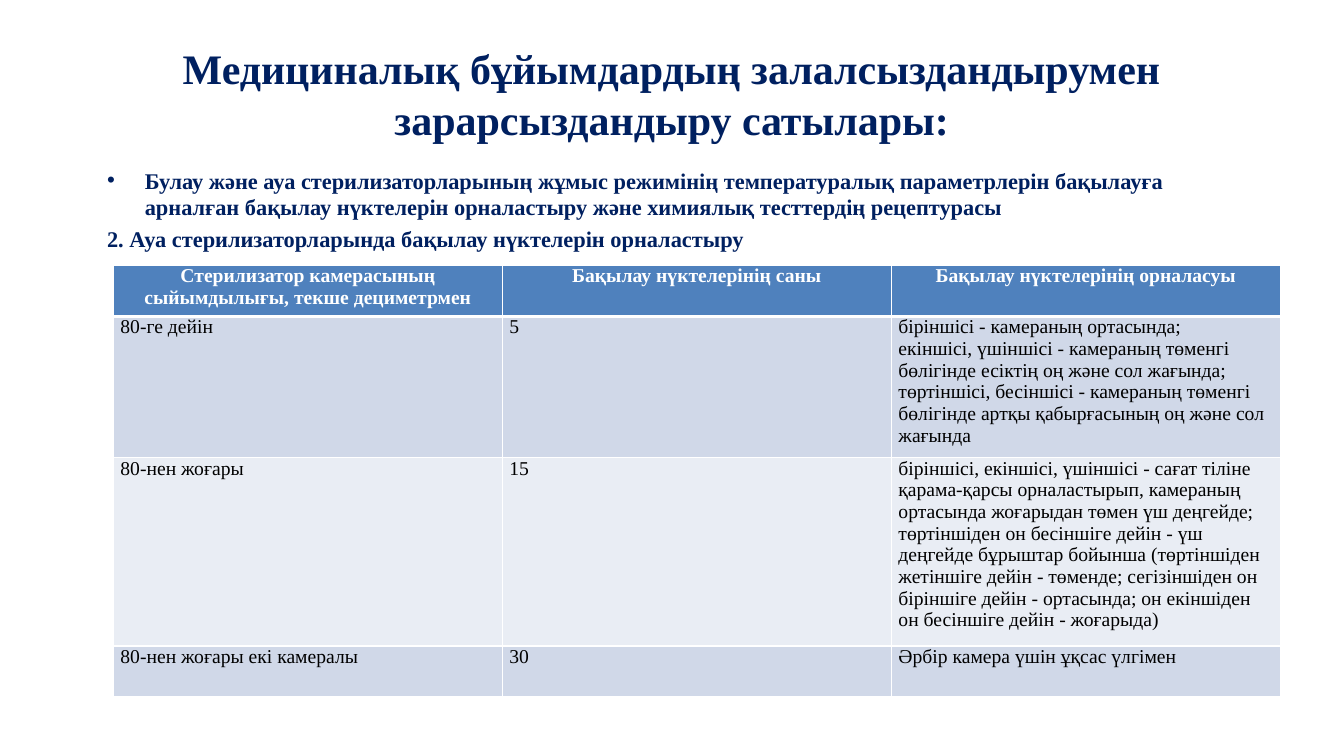
from lxml import etree
from pptx import Presentation
from pptx.dml.color import RGBColor
from pptx.enum import text
from pptx.oxml import ns
from pptx.util import Pt

TITLE = "Медициналық бұйымдардың залалсыздандырумен зарарсыздандыру сатылары:"
INTRO = [  # bullet character, wording
    ("•", "Булау және ауа стерилизаторларының жұмыс режимінің температуралық "
          "параметрлерін бақылауға арналған бақылау нүктелерін орналастыру "
          "және химиялық тесттердің рецептурасы"),
    (None, "2. Ауа стерилизаторларында бақылау нүктелерін орналастыру"),
]
HEADER = ["Стерилизатор камерасының сыйымдылығы, текше дециметрмен",
          "Бақылау нүктелерінің саны", "Бақылау нүктелерінің орналасуы"]
STERILIZERS = [  # chamber volume, number of points, placement of points
    ("80-ге дейін", "5",
     "біріншісі - камераның ортасында;\n"
     "екіншісі, үшіншісі - камераның төменгі бөлігінде есіктің оң және сол жағында;\n"
     "төртіншісі, бесіншісі - камераның төменгі бөлігінде артқы қабырғасының "
     "оң және сол жағында"),
    ("80-нен жоғары", "15",
     "біріншісі, екіншісі, үшіншісі - сағат тіліне қарама-қарсы орналастырып, "
     "камераның ортасында жоғарыдан төмен үш деңгейде;\n"
     "төртіншіден он бесіншіге дейін - үш деңгейде бұрыштар бойынша "
     "(төртіншіден жетіншіге дейін - төменде; сегізіншіден он біріншіге дейін - "
     "ортасында; он екіншіден он бесіншіге дейін - жоғарыда)"),
    ("80-нен жоғары екі камералы", "30", "Әрбір камера үшін ұқсас үлгімен"),
]
ROW_HEIGHTS = [36.5, 93, 123.5, 36.5]
COLUMN_WIDTH = 277.9
FONT = "Times New Roman"
COLORS = {"navy": "002060", "header": "4F81BD", "odd": "D0D8E8",
          "even": "E9EDF4", "white": "FFFFFF", "black": "000000"}


def add_run(paragraph, wording, size, color, bold):
    run = paragraph.add_run()
    run.text = wording
    run.font.name, run.font.size, run.font.bold = FONT, Pt(size), bold
    run.font.color.rgb = RGBColor.from_string(COLORS[color])


def set_borders(cell, top, bottom):
    """Put white lines, with widths in points, on all four sides."""
    props = cell._tc.get_or_add_tcPr()
    sides = [("L", 1), ("R", 1), ("T", top), ("B", bottom)]
    for place, (side, width) in enumerate(sides):
        line = etree.Element(ns.qn("a:ln" + side), w=str(Pt(width)))
        fill = etree.SubElement(line, ns.qn("a:solidFill"))
        etree.SubElement(fill, ns.qn("a:srgbClr"), val=COLORS["white"])
        props.insert(place, line)


def fill_cell(cell, wording, fill, is_header):
    cell.fill.solid()
    cell.fill.fore_color.rgb = RGBColor.from_string(COLORS[fill])
    cell.margin_left = cell.margin_right = Pt(5)
    cell.margin_top = cell.margin_bottom = 0
    frame = cell.text_frame
    for i, part in enumerate(wording.split("\n")):
        paragraph = frame.add_paragraph() if i else frame.paragraphs[0]
        if is_header:
            paragraph.alignment = text.PP_ALIGN.CENTER
        add_run(paragraph, part, 14, "white" if is_header else "black", is_header)


prs = Presentation()
prs.slide_width, prs.slide_height = Pt(960), Pt(540)
slide = prs.slides.add_slide(prs.slide_layouts[5])

# Title
title = slide.shapes.title
title.left, title.top, title.width, title.height = Pt(48), Pt(21.6), Pt(864), Pt(90)
title.text_frame.vertical_anchor = text.MSO_ANCHOR.MIDDLE
heading = title.text_frame.paragraphs[0]
heading.alignment = text.PP_ALIGN.CENTER
add_run(heading, TITLE, 30, "navy", True)

# Introductory lines with a hanging indent
intro = slide.shapes.add_textbox(Pt(69.4), Pt(115.5), Pt(828), Pt(72)).text_frame
intro.word_wrap = True
for i, (bullet, wording) in enumerate(INTRO):
    paragraph = intro.add_paragraph() if i else intro.paragraphs[0]
    paragraph.space_before = Pt(3.2)
    props = paragraph._p.get_or_add_pPr()
    props.set("marL", str(Pt(27)))
    props.set("indent", str(-Pt(27)))
    if bullet:
        etree.SubElement(props, ns.qn("a:buFont"), typeface="Arial")
        etree.SubElement(props, ns.qn("a:buChar"), char=bullet)
    else:
        etree.SubElement(props, ns.qn("a:buNone"))
    add_run(paragraph, wording, 16, "navy", True)

# Table of control points
rows = [HEADER, *STERILIZERS]
points = slide.shapes.add_table(
    len(rows), len(HEADER), Pt(81), Pt(189.5),
    Pt(COLUMN_WIDTH * len(HEADER)), Pt(sum(ROW_HEIGHTS))).table
for column in points.columns:
    column.width = Pt(COLUMN_WIDTH)
for r, (row, height) in enumerate(zip(rows, ROW_HEIGHTS)):
    points.rows[r].height = Pt(height)
    fill = "header" if r == 0 else "odd" if r % 2 else "even"
    for c, wording in enumerate(row):
        cell = points.cell(r, c)
        fill_cell(cell, wording, fill, r == 0)
        set_borders(cell, top=3 if r == 1 else 1, bottom=3 if r == 0 else 1)

prs.save("out.pptx")
